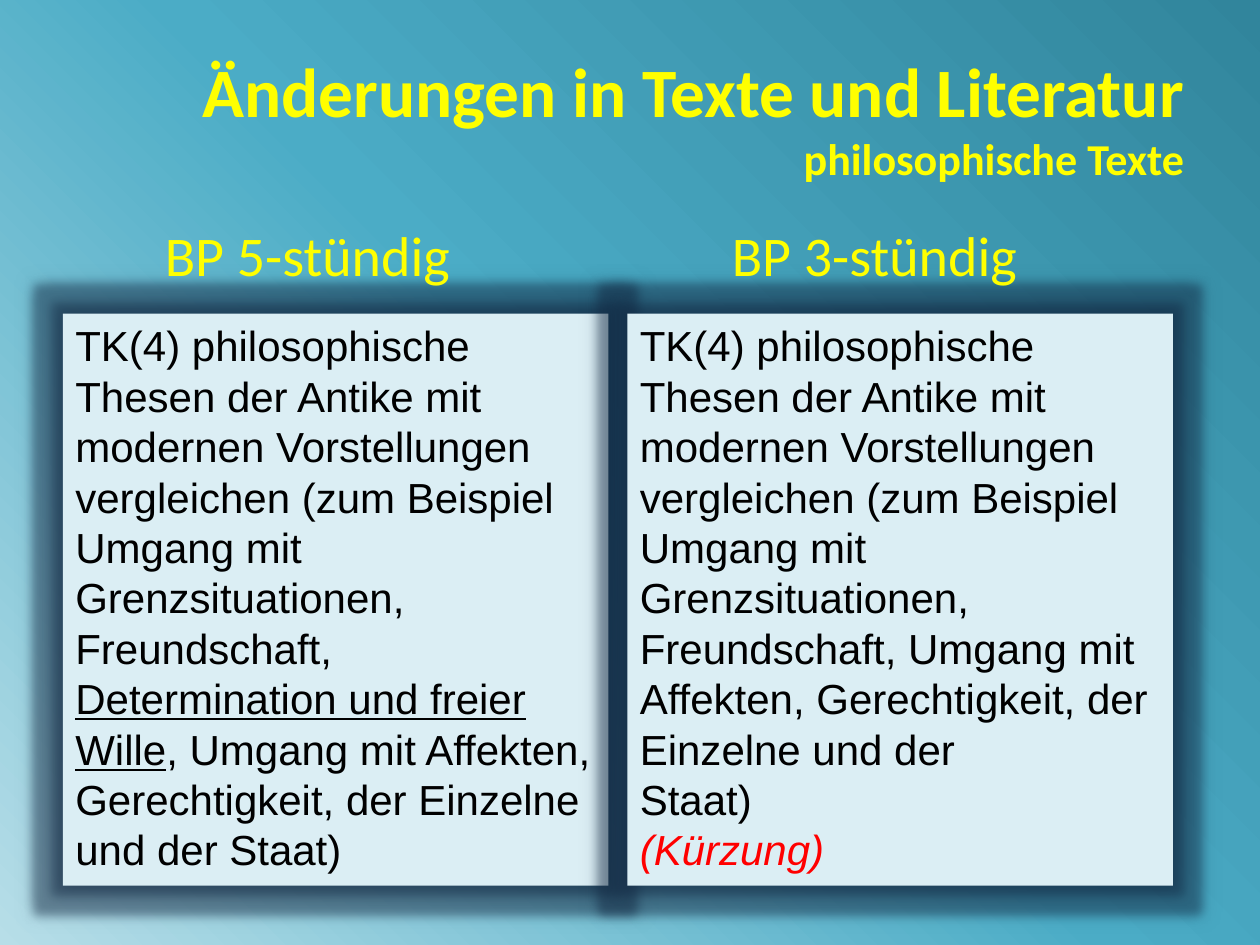
"""Build a slide comparing philosophical texts in the five-hour and three-hour courses."""
from copy import deepcopy
from dataclasses import dataclass, field

from lxml.etree import SubElement
from pptx import Presentation
from pptx.dml.color import RGBColor
from pptx.enum.shapes import MSO_SHAPE
from pptx.enum.text import MSO_ANCHOR, PP_ALIGN
from pptx.oxml.ns import qn
from pptx.util import Inches, Pt

COLORS = {
    "heading": "FFFF00",
    "panel": "DBEEF4",
    "text": "000000",
    "cut": "FF0000",
    "halo": "10253F",
}
GRADIENT = [(0, "31859C"), (0.5, "4BACC6"), (1, "B7DEE8")]
TITLE = {"name": "Calibri", "bold": True}
HEADING = {"name": "Calibri", "size": Pt(32)}
BODY = {"name": "Arial", "size": Pt(24)}


@dataclass
class Span:
    text: str
    color: str = "text"
    style: dict = field(default_factory=dict)


@dataclass
class Column:
    heading: str
    heading_left: float
    panel_left: float
    paragraphs: list[list[Span]]


COLUMNS = [
    Column("BP 5-stündig", 1.21, 0.5, [
        [Span("TK(4) philosophische Thesen der Antike mit modernen Vorstellungen "
              "vergleichen (zum Beispiel")],
        [Span("Umgang mit Grenzsituationen, Freundschaft, "),
         Span("Determination und freier Wille", style={"underline": True}),
         Span(", Umgang mit Affekten,")],
        [Span("Gerechtigkeit, der Einzelne und der Staat)")],
    ]),
    Column("BP 3-stündig", 5.71, 4.98, [
        [Span("TK(4) philosophische Thesen der Antike mit modernen Vorstellungen "
              "vergleichen (zum Beispiel Umgang mit Grenzsituationen, Freundschaft, "
              "Umgang mit Affekten, Gerechtigkeit, der Einzelne und der")],
        [Span("Staat)")],
        [Span("(Kürzung)", "cut", {"italic": True})],
    ]),
]


def add_span(para, span: Span, base: dict) -> None:
    """Append a formatted run to a paragraph."""
    run = para.add_run()
    run.text = span.text
    for name, value in {**base, **span.style}.items():
        setattr(run.font, name, value)
    run.font.color.rgb = RGBColor.from_string(COLORS[span.color])


def paint_background(page) -> None:
    """Fill the page with a diagonal gradient of three stops."""
    fill = page.background.fill
    fill.gradient()
    fill.gradient_angle = 225
    stop_list = page._element.find(".//" + qn("a:gsLst"))
    stop_list.insert(1, deepcopy(stop_list[0]))
    for stop, (position, color) in zip(fill.gradient_stops, GRADIENT):
        stop.position = position
        stop.color.rgb = RGBColor.from_string(color)


def add_halo(box) -> None:
    """Surround a panel with a glow and a tighter shadow that stay clear of the text."""
    box.shadow.inherit = False
    effects = box._element.spPr.find(qn("a:effectLst"))
    glow = SubElement(effects, qn("a:glow"), rad=str(Inches(0.16)))
    shadow = SubElement(effects, qn("a:outerShdw"), blurRad=str(Inches(0.1)),
                        dist="0", algn="ctr", rotWithShape="0")
    for effect, alpha in ((glow, "40000"), (shadow, "50000")):
        color = SubElement(effect, qn("a:srgbClr"), val=COLORS["halo"])
        SubElement(color, qn("a:alpha"), val=alpha)


def fill_title(page) -> None:
    """Write the two-line title in its placeholder."""
    title = page.shapes.title
    title.left, title.top = Inches(0.5), Inches(0.3)
    title.width, title.height = Inches(9), Inches(1.25)
    title.text_frame.vertical_anchor = MSO_ANCHOR.MIDDLE
    para = title.text_frame.paragraphs[0]
    para.alignment = PP_ALIGN.RIGHT
    add_span(para, Span("Änderungen in Texte und Literatur", "heading", {"size": Pt(39.6)}), TITLE)
    para.add_line_break()
    add_span(para, Span("philosophische Texte", "heading", {"size": Pt(25.2)}), TITLE)


def add_heading(page, column: Column) -> None:
    """Add the heading above a column."""
    box = page.shapes.add_textbox(Inches(column.heading_left), Inches(1.7), Inches(3), Inches(0.65))
    box.text_frame.word_wrap = True
    add_span(box.text_frame.paragraphs[0], Span(column.heading, "heading"), HEADING)


def add_panel(page, column: Column) -> None:
    """Add the text panel of a column."""
    box = page.shapes.add_shape(MSO_SHAPE.RECTANGLE, Inches(column.panel_left), Inches(2.49),
                                Inches(4.33), Inches(4.54))
    box.fill.solid()
    box.fill.fore_color.rgb = RGBColor.from_string(COLORS["panel"])
    box.line.fill.background()
    add_halo(box)
    frame = box.text_frame
    frame.word_wrap = True
    frame.vertical_anchor = MSO_ANCHOR.TOP
    for index, spans in enumerate(column.paragraphs):
        para = frame.add_paragraph() if index else frame.paragraphs[0]
        para.alignment = PP_ALIGN.LEFT
        for span in spans:
            add_span(para, span, BODY)


def main() -> None:
    """Create and save the deck."""
    deck = Presentation()
    deck.slide_width, deck.slide_height = Inches(10), Inches(7.5)
    page = deck.slides.add_slide(deck.slide_layouts[5])
    paint_background(page)
    fill_title(page)
    for column in COLUMNS:
        add_panel(page, column)
    for column in COLUMNS:
        add_heading(page, column)
    deck.save("out.pptx")


if __name__ == "__main__":
    main()
